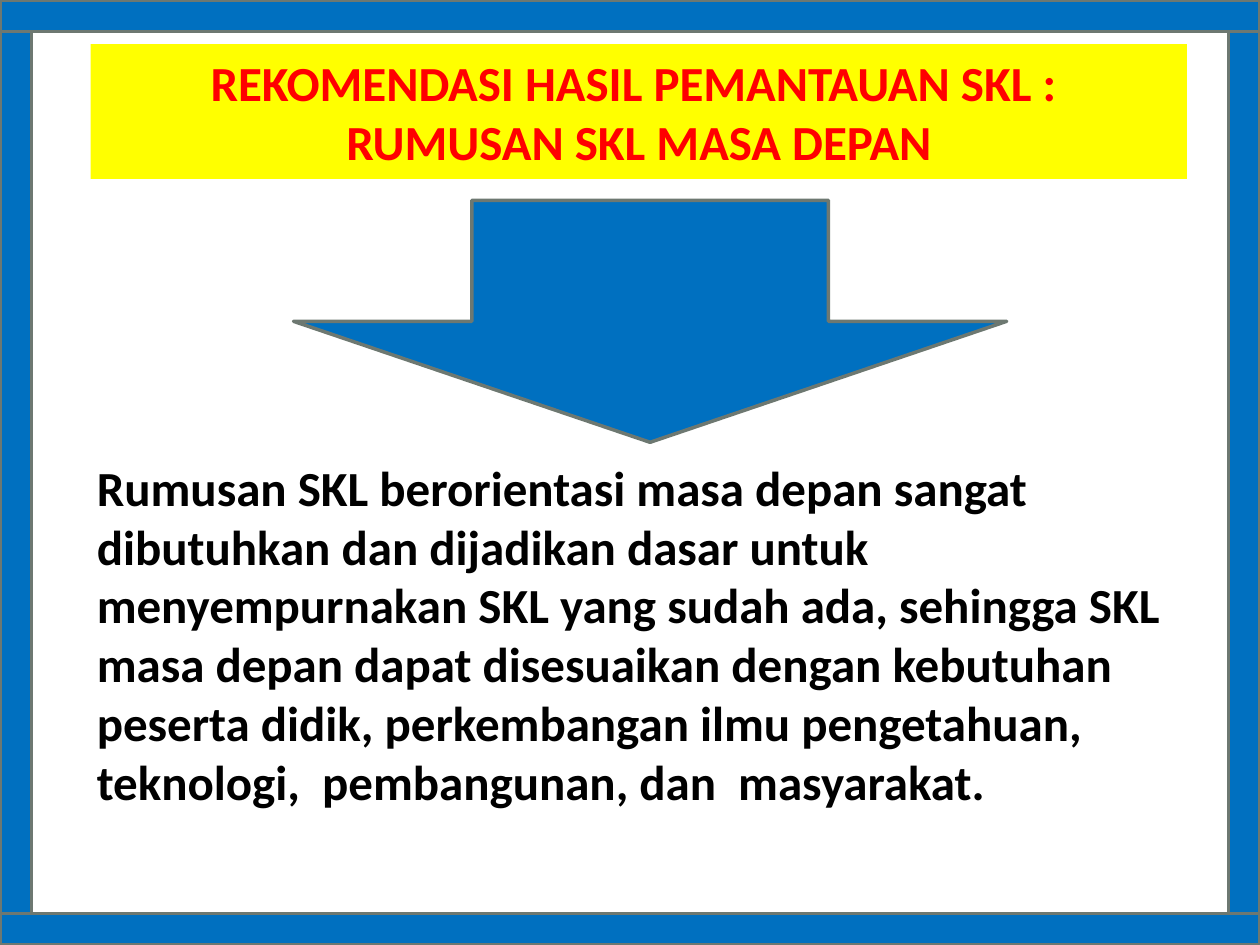
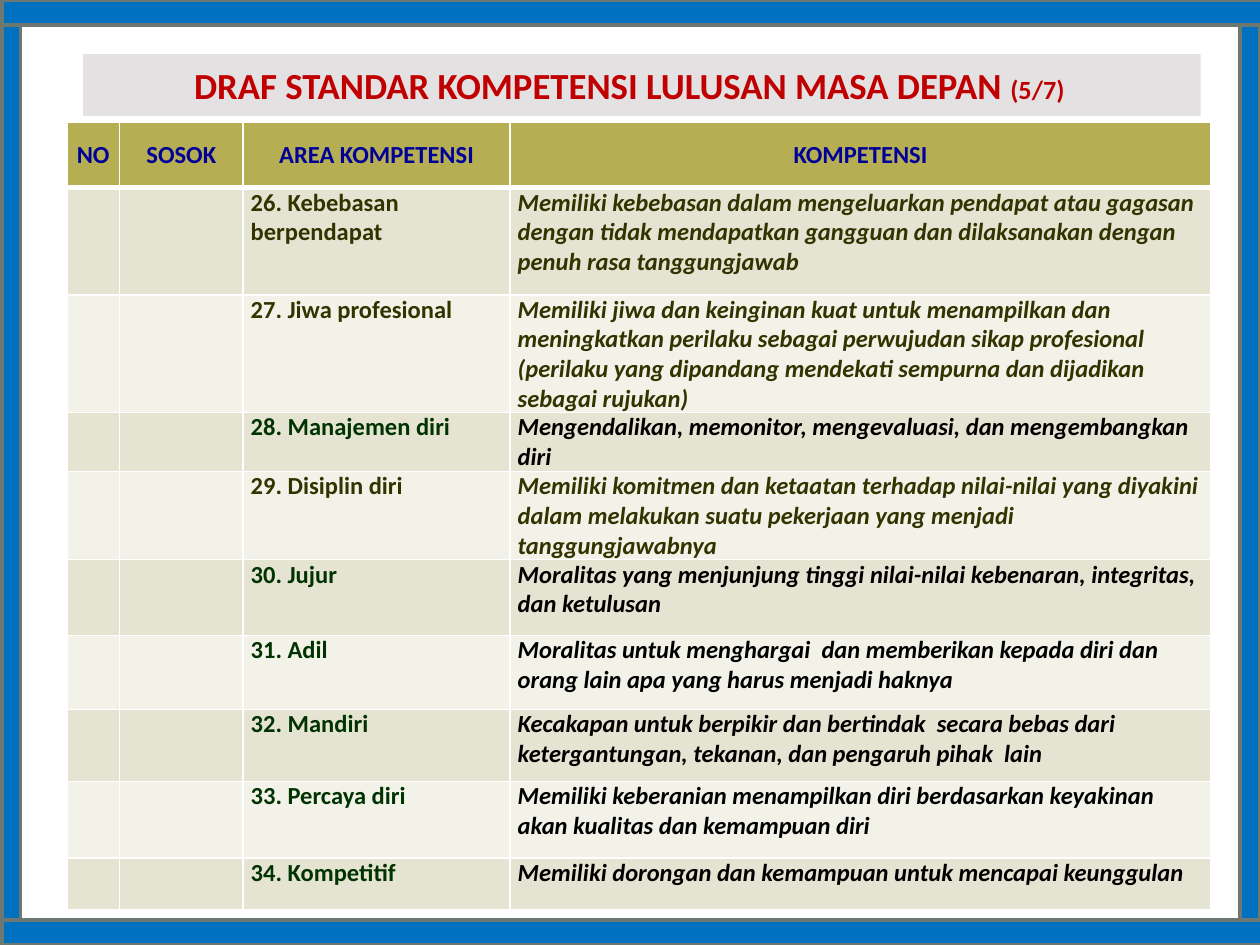
from lxml import etree
from pptx import Presentation
from pptx import util as u
from pptx.dml.color import RGBColor
from pptx.enum import shapes, text
from pptx.oxml.ns import qn

COLS, ROWS = 100, 75
FONT = "Calibri"
COLORS = {
    "frame": "0070C0", "edge": "6D7871", "yellow": "FFFF00", "red": "FF0000",
    "black": "000000", "white": "FFFFFF", "band": "E4E1E3", "crimson": "C00000",
    "header": "B5AE53", "navy": "000099", "odd": "E5E3D1", "even": "F3F2E9",
    "olive": "333300", "green": "003300",
}
HEADINGS = ["NO", "SOSOK", "AREA KOMPETENSI", "KOMPETENSI"]
COL_WIDTHS = [4.2, 9.8, 21.2, 55.6]
ROW_HEIGHTS = [5.2, 8.5, 8.5, 3.9, 5.7, 6, 5.9, 5.7, 6.1, 4.1]
FIRST_NUMBER = 26
COMPETENCIES = [
    ("Kebebasan berpendapat", "olive", "olive",
     "Memiliki kebebasan dalam mengeluarkan pendapat atau gagasan dengan tidak "
     "mendapatkan gangguan dan dilaksanakan dengan penuh rasa tanggungjawab"),
    ("Jiwa profesional", "olive", "olive",
     "Memiliki jiwa dan keinginan kuat untuk menampilkan dan meningkatkan perilaku "
     "sebagai perwujudan sikap profesional (perilaku yang dipandang mendekati "
     "sempurna dan dijadikan sebagai rujukan)"),
    ("Manajemen diri", "green", "black",
     "Mengendalikan, memonitor, mengevaluasi, dan mengembangkan diri"),
    ("Disiplin diri", "olive", "olive",
     "Memiliki komitmen dan ketaatan terhadap nilai-nilai yang diyakini dalam "
     "melakukan suatu pekerjaan yang menjadi tanggungjawabnya"),
    ("Jujur", "green", "black",
     "Moralitas yang menjunjung tinggi nilai-nilai kebenaran, integritas, dan ketulusan"),
    ("Adil", "green", "black",
     "Moralitas untuk menghargai  dan memberikan kepada diri dan orang lain apa "
     "yang harus menjadi haknya"),
    ("Mandiri", "green", "black",
     "Kecakapan untuk berpikir dan bertindak  secara bebas dari ketergantungan, "
     "tekanan, dan pengaruh pihak  lain"),
    ("Percaya diri", "green", "black",
     "Memiliki keberanian menampilkan diri berdasarkan keyakinan akan kualitas "
     "dan kemampuan diri"),
    ("Kompetitif", "green", "black",
     "Memiliki dorongan dan kemampuan untuk mencapai keunggulan"),
]


def rgb(name):
    return RGBColor.from_string(COLORS[name])


def write(p, content, size=14, color="black", bold=True, italic=False, align=None):
    if align is not None:
        p.alignment = align
    for i, line in enumerate(content.split("\n")):
        if i:
            p.add_line_break()
        r = p.add_run()
        r.text = line
        f = r.font
        f.name, f.size, f.bold, f.italic = FONT, u.Pt(size), bold, italic
        f.color.rgb = rgb(color)


class Deck:
    def __init__(self):
        self.prs = Presentation()
        self.prs.slide_width, self.prs.slide_height = u.Inches(10), u.Inches(7.5)
        self.s = None

    def new_slide(self):
        self.s = self.prs.slides.add_slide(self.prs.slide_layouts[6])

    def x(self, cols):
        return round(self.prs.slide_width * cols / COLS)

    def y(self, rows):
        return round(self.prs.slide_height * rows / ROWS)

    def place(self, left, top, width, height):
        return self.x(left), self.y(top), self.x(width), self.y(height)

    def shape(self, box, fill, edge=None, kind=shapes.MSO_SHAPE.RECTANGLE):
        sp = self.s.shapes.add_shape(kind, *self.place(*box))
        sp.shadow.inherit = False
        sp.fill.solid()
        sp.fill.fore_color.rgb = rgb(fill)
        if edge:
            sp.line.color.rgb = rgb(edge)
            sp.line.width = u.Pt(2)
        else:
            sp.line.fill.background()
        return sp

    def frame(self, bar, left, right, shift=0):
        inner = ROWS - 2 * bar
        for box in [(shift, 0, COLS, bar), (shift, ROWS - bar, COLS, bar),
                    (shift, bar, left, inner), (COLS - right, bar, right, inner)]:
            self.shape(box, "frame", "edge")

    def label(self, box, anchor=text.MSO_ANCHOR.TOP):
        tf = self.s.shapes.add_textbox(*self.place(*box)).text_frame
        tf.word_wrap = True
        tf.vertical_anchor = anchor
        return tf.paragraphs[0]

    def cell(self, cell, fill, bottom=1):
        cell.margin_left = cell.margin_right = u.Inches(0.06)
        cell.margin_top = cell.margin_bottom = 0
        tc_pr = cell._tc.get_or_add_tcPr()
        for side, width in zip("LRTB", (1, 1, 1, bottom)):
            ln = etree.SubElement(tc_pr, qn(f"a:ln{side}"), w=str(u.Pt(width)))
            solid = etree.SubElement(ln, qn("a:solidFill"))
            etree.SubElement(solid, qn("a:srgbClr"), val=COLORS["white"])
        cell.fill.solid()
        cell.fill.fore_color.rgb = rgb(fill)
        return cell.text_frame.paragraphs[0]

    def table(self, left, top):
        box = self.place(left, top, sum(COL_WIDTHS), sum(ROW_HEIGHTS))
        tbl = self.s.shapes.add_table(len(ROW_HEIGHTS), len(COL_WIDTHS), *box).table
        tbl.horz_banding = False
        for col, width in zip(tbl.columns, COL_WIDTHS):
            col.width = self.x(width)
        for row, height in zip(tbl.rows, ROW_HEIGHTS):
            row.height = self.y(height)
        for c, heading in enumerate(HEADINGS):
            cell = tbl.cell(0, c)
            cell.vertical_anchor = text.MSO_ANCHOR.MIDDLE
            write(self.cell(cell, "header", bottom=3), heading, color="navy",
                  align=text.PP_ALIGN.CENTER)
        for i, (area, area_color, color, competency) in enumerate(COMPETENCIES):
            fill = "even" if i % 2 else "odd"
            ps = [self.cell(tbl.cell(i + 1, c), fill) for c in range(len(HEADINGS))]
            write(ps[2], f"{FIRST_NUMBER + i}. {area}", color=area_color)
            write(ps[3], competency, color=color, italic=True)


def recommendation(deck):
    deck.new_slide()
    deck.frame(bar=2.5, left=2.5, right=2.5)
    tf = deck.shape((7.2, 3.5, 87, 10.7), "yellow").text_frame
    tf.word_wrap = True
    tf.vertical_anchor = text.MSO_ANCHOR.MIDDLE
    write(tf.paragraphs[0], "REKOMENDASI HASIL PEMANTAUAN SKL : \nRUMUSAN SKL MASA DEPAN",
          size=28, color="red", align=text.PP_ALIGN.CENTER)
    deck.shape((23.3, 15.9, 56.6, 19.2), "frame", "edge", shapes.MSO_SHAPE.DOWN_ARROW)
    write(deck.label((6.7, 35.8, 87.5, 27)),
          "Rumusan SKL berorientasi masa depan sangat dibutuhkan dan dijadikan dasar "
          "untuk menyempurnakan SKL yang sudah ada, sehingga SKL masa depan dapat "
          "disesuaikan dengan kebutuhan peserta didik, perkembangan ilmu pengetahuan, "
          "teknologi,  pembangunan, dan  masyarakat.", size=28)


def draft_standard(deck):
    deck.new_slide()
    deck.table(5.3, 9.7)
    deck.shape((6.6, 4.3, 88.7, 4.9), "band")
    p = deck.label((13.6, 4.3, 72.7, 4.8), text.MSO_ANCHOR.MIDDLE)
    write(p, "DRAF STANDAR KOMPETENSI LULUSAN MASA DEPAN ", size=21, color="crimson",
          align=text.PP_ALIGN.CENTER)
    write(p, "(5/7)", size=15, color="crimson")
    deck.frame(bar=2, left=1.5, right=1.6, shift=0.15)


def main():
    deck = Deck()
    recommendation(deck)
    draft_standard(deck)
    deck.prs.save("out.pptx")


if __name__ == "__main__":
    main()
